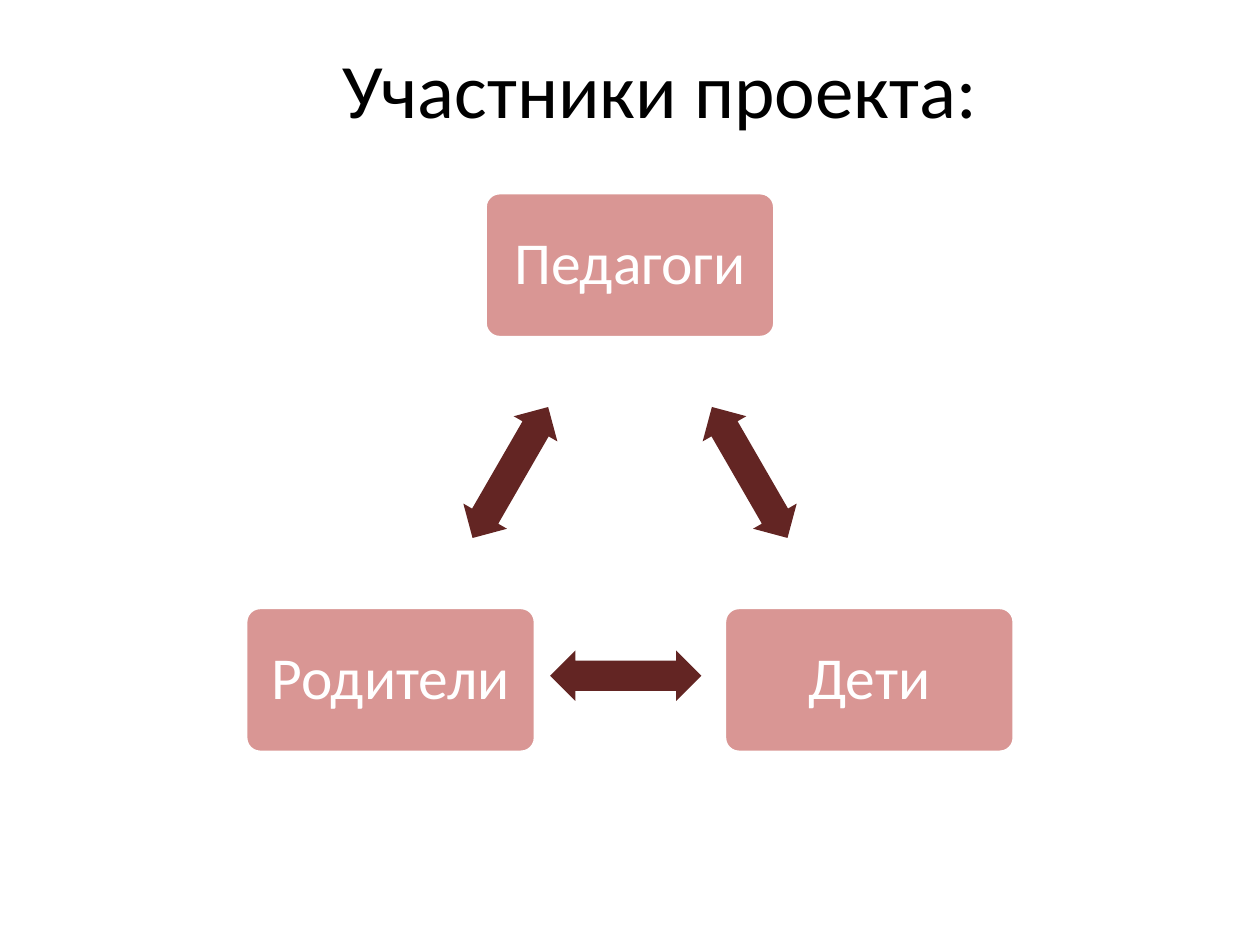
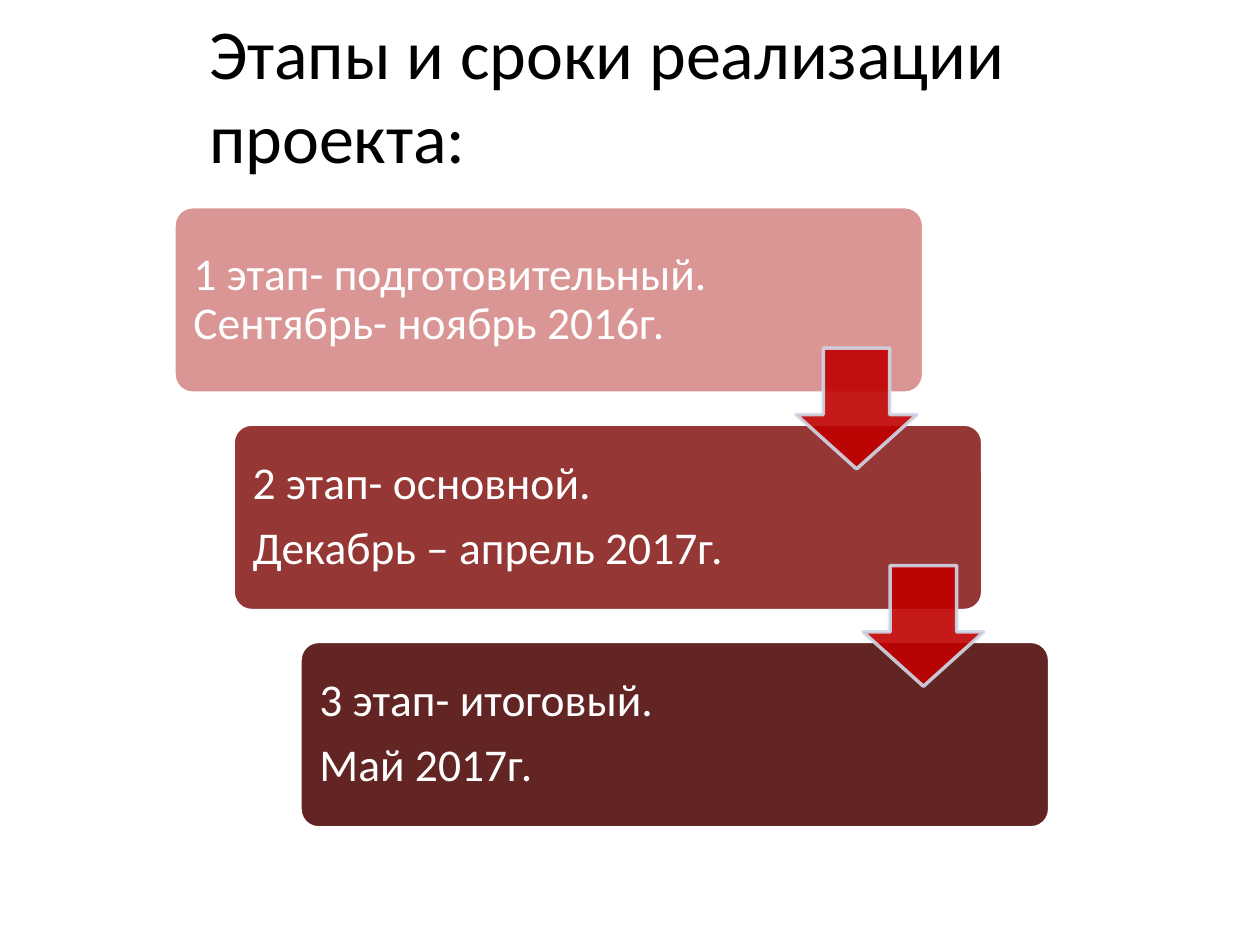
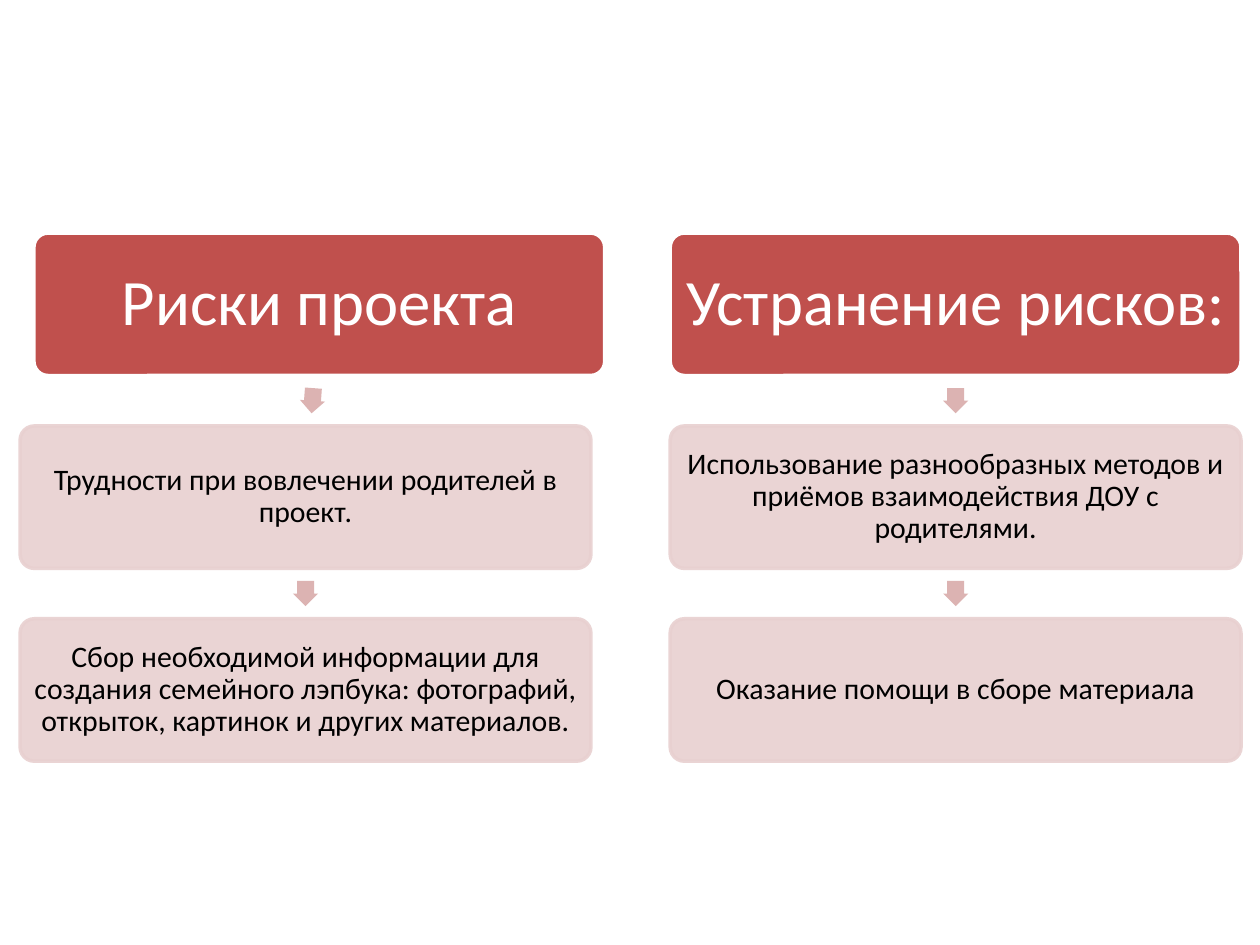
from dataclasses import dataclass
from itertools import combinations, pairwise
from math import atan2, degrees

from lxml.etree import SubElement
from pptx import Presentation
from pptx.dml.color import RGBColor
from pptx.enum.shapes import MSO_SHAPE as Kind
from pptx.enum.text import MSO_ANCHOR as Anchor, PP_ALIGN as Align
from pptx.oxml.ns import qn
from pptx.util import Pt


@dataclass(frozen=True)
class Theme:
    font: str = "Calibri"
    black: str = "000000"
    white: str = "FFFFFF"
    rose: str = "D99694"
    brick: str = "953735"
    wine: str = "632523"
    red: str = "C0504D"
    pale: str = "E8D0D0"
    dusk: str = "DCB3B2"
    ruby: str = "C00000"
    mist: str = "D0D8E8"
    title: int = 44
    long: int = 40
    role: int = 34
    stage: int = 26
    head: int = 37
    body: int = 17


T = Theme()

# Slide 1: name and centre of each box
TEAM = "Участники проекта:"
ROLES = [
    ("Педагоги", 360, 151.5),
    ("Дети", 496.8, 388.5),
    ("Родители", 223.2, 388.5),
]
ROLE_W, ROLE_H = 165.6, 82.8
LINK_W, LINK_H = 86.4, 28.8
BASE_SHIFT = -2.4  # the level arrow sits a little up and to the left

# Slide 2: left edge, colour and lines of each stage
PLAN = "Этапы и сроки реализации проекта:"
STAGES = [
    (99.4, T.rose, ["1 этап- подготовительный. Сентябрь- ноябрь 2016г."]),
    (133.2, T.brick, ["2 этап- основной.", "Декабрь – апрель 2017г."]),
    (171.4, T.wine, ["3 этап- итоговый.", "Май 2017г."]),
]
STAGE_TOP, STAGE_STEP = 118.1, 124.2
STAGE_W, STAGE_H = 428.4, 106.6
DROP, DROP_X = 69, 321.8

# Slide 3: left edge of head, left edge of notes, texts from top down
RISKS = [
    (19.4, 11.5, [
        "Риски проекта",
        "Трудности при вовлечении родителей в проект.",
        "Сбор необходимой информации для создания семейного лэпбука: "
        "фотографий, открыток, картинок и других материалов.",
    ]),
    (383, 383, [
        "Устранение рисков:",
        "Использование разнообразных методов и приёмов взаимодействия "
        "ДОУ с родителями.",
        "Оказание помощи в сборе материала",
    ]),
]
RISK_TOP, RISK_STEP = 133.2, 110.2
RISK_W, RISK_H = 326.2, 81.4
TIP = 14.4


def rgb(code):
    return RGBColor.from_string(code)


def style(par, size, color, align):
    par.alignment = align
    par.font.name, par.font.size = T.font, Pt(size)
    par.font.color.rgb = rgb(color)


def add_slide(deck, title=None, spot=None, size=T.title, align=Align.CENTER):
    """Add a slide, with a title at spot (left, top, width, height) if given."""
    slide = deck.slides.add_slide(deck.slide_layouts[5 if title else 6])
    if title:
        head = slide.shapes.title
        head.left, head.top, head.width, head.height = map(Pt, spot)
        head.text_frame.text = title
        head.text_frame.vertical_anchor = Anchor.MIDDLE
        style(head.text_frame.paragraphs[0], size, T.black, align)
    return slide


def add_form(slide, kind, spot, adjust, fill, line=None, clear=False):
    """Add a preset shape; clear makes fill and line 90% opaque."""
    form = slide.shapes.add_shape(kind, *map(Pt, spot))
    form.shadow.inherit = False
    for i, value in enumerate(adjust):
        form.adjustments[i] = value
    form.fill.solid()
    form.fill.fore_color.rgb = rgb(fill)
    if line:
        form.line.color.rgb = rgb(line)
        form.line.width = Pt(2)
    else:
        form.line.fill.background()
    if clear:
        for color in form._element.spPr.iter(qn("a:srgbClr")):
            SubElement(color, qn("a:alpha"), val="90000")
    return form


def add_box(slide, spot, lines, fill, size, pad, color=T.white, line=T.white,
            align=Align.CENTER, right=None, clear=False):
    box = add_form(slide, Kind.ROUNDED_RECTANGLE, spot, [0.1], fill, line, clear)
    frame = box.text_frame
    frame.word_wrap = True
    frame.vertical_anchor = Anchor.MIDDLE
    frame.margin_left = frame.margin_top = frame.margin_bottom = Pt(pad)
    frame.margin_right = Pt(right or pad)
    frame.text = "\n".join(lines)
    for par in frame.paragraphs:
        par.line_spacing = 0.9
        par.space_after = Pt(round(size * 0.35, 1))
        style(par, size, color, align)


def add_link(slide, kind, start, end, wide, high, adjust, fill, shift=0):
    """Put a block arrow halfway between two points, turned along their line."""
    (ax, ay), (bx, by) = start, end
    left = (ax + bx - wide) / 2 + shift
    top = (ay + by - high) / 2 + shift
    link = add_form(slide, kind, (left, top, wide, high), adjust, fill)
    link.rotation = degrees(atan2(by - ay, bx - ax))


def draw_team(deck):
    slide = add_slide(deck, TEAM, (106.6, 21.6, 541.4, 56.9))
    for name, x, y in ROLES:
        spot = (x - ROLE_W / 2, y - ROLE_H / 2, ROLE_W, ROLE_H)
        add_box(slide, spot, [name], T.rose, T.role, 10)
    for (_, *start), (_, *end) in combinations(ROLES, 2):
        shift = BASE_SHIFT if start[1] == end[1] else 0
        add_link(slide, Kind.LEFT_RIGHT_ARROW, start, end, LINK_W, LINK_H,
                 [0.6, 0.5], T.wine, shift)


def draw_plan(deck):
    slide = add_slide(deck, PLAN, (112.3, 11.5, 607.7, 84.2), T.long, Align.LEFT)
    for i, (left, fill, lines) in enumerate(STAGES):
        spot = (left, STAGE_TOP + i * STAGE_STEP, STAGE_W, STAGE_H)
        add_box(slide, spot, lines, fill, T.stage, 8, align=Align.LEFT, right=118)
    for i, (left, *_) in enumerate(STAGES[1:], 1):
        gap = STAGE_STEP - STAGE_H
        top = STAGE_TOP + i * STAGE_STEP - (gap + DROP) / 2
        add_form(slide, Kind.DOWN_ARROW, (left + DROP_X, top, DROP, DROP),
                 [0.55, 0.45], T.ruby, T.mist, clear=True)


def draw_risks(deck):
    slide = add_slide(deck)
    for head, note, texts in RISKS:
        mids = []
        for i, text in enumerate(texts):
            left = note if i else head
            top = RISK_TOP + i * RISK_STEP
            spot = (left, top, RISK_W, RISK_H)
            if i:
                add_box(slide, spot, [text], T.pale, T.body, 1.4,
                        T.black, T.pale, clear=True)
            else:
                add_box(slide, spot, [text], T.red, T.head, 3.6)
            mids.append((left + RISK_W / 2, top + RISK_H / 2))
        for start, end in pairwise(mids):
            add_link(slide, Kind.RIGHT_ARROW, start, end, TIP, TIP,
                     [0.67, 0.5], T.dusk)


def main():
    deck = Presentation()
    deck.slide_width, deck.slide_height = Pt(720), Pt(540)
    draw_team(deck)
    draw_plan(deck)
    draw_risks(deck)
    deck.save("out.pptx")


if __name__ == "__main__":
    main()
